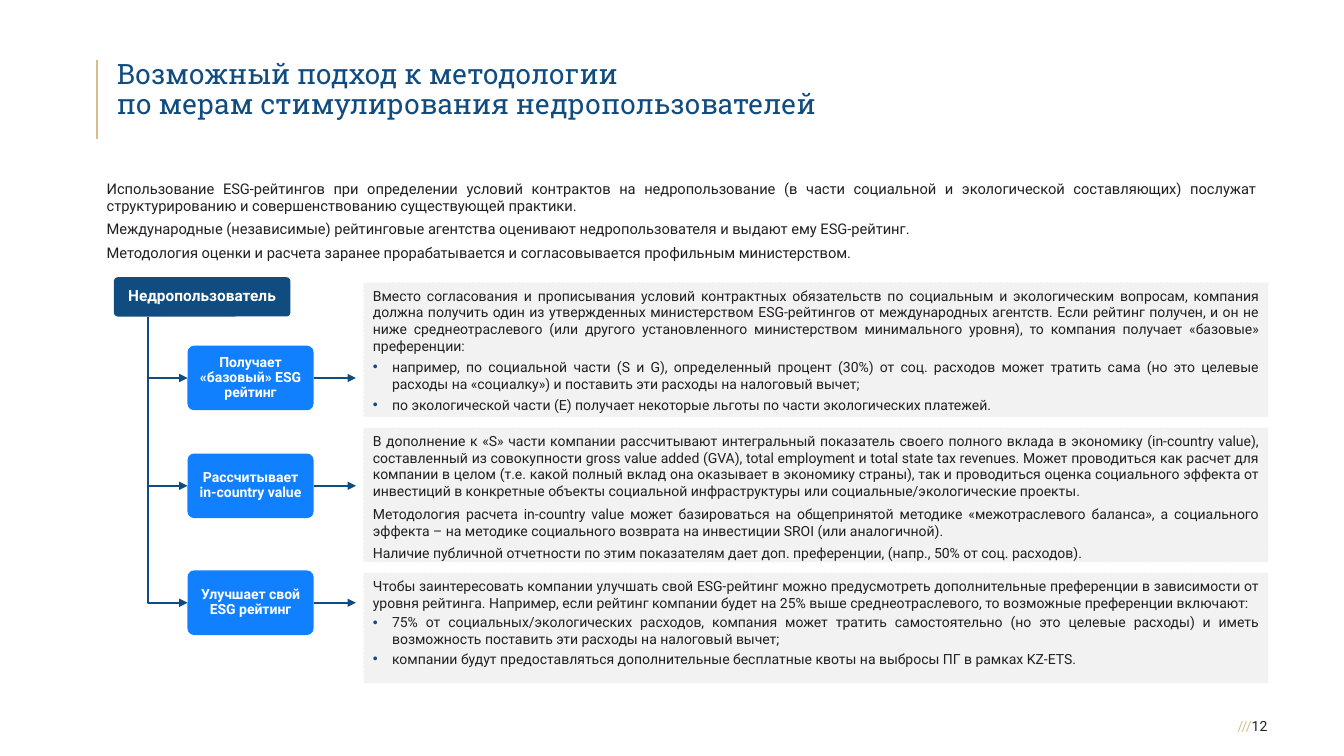
from pptx import Presentation
from pptx.dml.color import RGBColor
from pptx.enum import dml, shapes, text
from pptx.oxml.ns import qn
from pptx.util import Inches, Pt
from lxml import etree

NAVY = RGBColor(0x11, 0x4C, 0x81)
BLUE = RGBColor(0x10, 0x80, 0xFF)
GOLD = RGBColor(0xD9, 0xBE, 0x87)
GREY = RGBColor(0xF2, 0xF2, 0xF2)
INK = RGBColor(0x23, 0x1F, 0x20)
WHITE = RGBColor(0xFF, 0xFF, 0xFF)

CENTER, RIGHT, JUSTIFY = (text.PP_ALIGN.CENTER, text.PP_ALIGN.RIGHT,
                          text.PP_ALIGN.JUSTIFY)
TOP, MIDDLE = text.MSO_ANCHOR.TOP, text.MSO_ANCHOR.MIDDLE

TITLE = ["Возможный подход к методологии",
         "по мерам стимулирования недропользователей"]
INTRO = [
    "Использование ESG-рейтингов при определении условий контрактов на недропользование (в части социальной и экологической составляющих) послужат структурированию и совершенствованию существующей практики.",
    "Международные (независимые) рейтинговые агентства оценивают недропользователя и выдают ему ESG-рейтинг.",
    "Методология оценки и расчета заранее прорабатывается и согласовывается профильным министерством.",
]

# step label, step top, panel top, panel height, (before, after) spacing,
# plain paragraphs, bulleted paragraphs
STEPS = [
    ("Получает «базовый» ESG рейтинг", 3.43, 2.8, 1.34, (0, 3), [
        "Вместо согласования и прописывания условий контрактных обязательств по социальным и экологическим вопросам, компания должна получить один из утвержденных министерством ESG-рейтингов от международных агентств. Если рейтинг получен, и он не ниже среднеотраслевого (или другого установленного министерством минимального уровня), то компания получает «базовые» преференции:",
    ], [
        "например, по социальной части (S и G), определенный процент (30%) от соц. расходов может тратить сама (но это целевые расходы на «социалку») и поставить эти расходы на налоговый вычет;",
        "по экологической части (E) получает некоторые льготы по части экологических платежей.",
    ]),
    ("Рассчитывает in-country value", 4.5, 4.24, 1.34, (2, 2), [
        "В дополнение к «S» части компании рассчитывают интегральный показатель своего полного вклада в экономику (in-country value), составленный из совокупности gross value added (GVA), total employment и total state tax revenues. Может проводиться как расчет для компании в целом (т.е. какой полный вклад она оказывает в экономику страны), так и проводиться оценка социального эффекта от инвестиций в конкретные объекты социальной инфраструктуры или социальные/экологические проекты.",
        "Методология расчета in-country value может базироваться на общепринятой методике «межотраслевого баланса», а социального эффекта – на методике социального возврата на инвестиции SROI (или аналогичной).",
        "Наличие публичной отчетности по этим показателям дает доп. преференции, (напр., 50% от соц. расходов).",
    ], []),
    ("Улучшает свой ESG рейтинг", 5.66, 5.68, 1.1, (1, 1), [
        "Чтобы заинтересовать компании улучшать свой ESG-рейтинг можно предусмотреть дополнительные преференции в зависимости от уровня рейтинга. Например, если рейтинг компании будет на 25% выше среднеотраслевого, то возможные преференции включают:",
    ], [
        "75% от социальных/экологических расходов, компания может тратить самостоятельно (но это целевые расходы) и иметь возможность поставить эти расходы на налоговый вычет;",
        "компании будут предоставляться дополнительные бесплатные квоты на выбросы ПГ в рамках KZ-ETS.",
    ]),
]
STEP_X, STEP_W, STEP_H = 1.86, 1.25, 0.64
TRUNK_X, TRUNK_TOP = 1.47, 3.14


def add_run(p, words, size, color, font="Roboto", bold=False):
    r = p.add_run()
    r.text = words
    r.font.name, r.font.size, r.font.bold = font, Pt(size), bold
    r.font.color.rgb = color


def set_frame(tf, insets=(0.1, 0.05, 0.1, 0.05), anchor=TOP):
    tf.word_wrap = True
    tf.vertical_anchor = anchor
    (tf.margin_left, tf.margin_top,
     tf.margin_right, tf.margin_bottom) = map(Inches, insets)


def add_bullet(p):
    pPr = p._p.get_or_add_pPr()
    pPr.set("marL", str(Inches(0.19)))
    pPr.set("indent", str(Inches(-0.19)))
    color = etree.SubElement(pPr, qn("a:buClr"))
    etree.SubElement(color, qn("a:srgbClr"), val=str(NAVY))
    etree.SubElement(pPr, qn("a:buFont"), typeface="Arial")
    etree.SubElement(pPr, qn("a:buChar"), char="•")


def write_paragraphs(tf, plain, bullets, size, spacing):
    before, after = spacing
    for i, words in enumerate(plain + bullets):
        p = tf.add_paragraph() if i else tf.paragraphs[0]
        p.alignment = JUSTIFY
        p.space_before, p.space_after = Pt(before if i else 0), Pt(after)
        if i >= len(plain):
            add_bullet(p)
        add_run(p, words, size, INK)


def add_textbox(s, x, y, w, h):
    return s.shapes.add_textbox(*map(Inches, (x, y, w, h))).text_frame


def add_box(s, kind, x, y, w, h, fill):
    sp = s.shapes.add_shape(kind, *map(Inches, (x, y, w, h)))
    sp.shadow.inherit = False
    sp.fill.solid()
    sp.fill.fore_color.rgb = fill
    sp.line.fill.background()
    return sp


def add_label(s, x, y, w, h, fill, words, size):
    sp = add_box(s, shapes.MSO_SHAPE.ROUNDED_RECTANGLE, x, y, w, h, fill)
    sp.adjustments[0] = 0.1
    set_frame(sp.text_frame, (0.08, 0.05, 0.08, 0.05), MIDDLE)
    p = sp.text_frame.paragraphs[0]
    p.alignment, p.line_spacing = CENTER, 0.9
    add_run(p, words, size, WHITE, bold=True)
    return sp


def add_panel(s, y, h, plain, bullets, spacing):
    sp = add_box(s, shapes.MSO_SHAPE.RECTANGLE, 3.6, y, 8.98, h, GREY)
    sp.line.color.rgb = WHITE
    sp.line.width = Pt(0.25)
    sp.line.dash_style = dml.MSO_LINE.DASH
    set_frame(sp.text_frame)
    write_paragraphs(sp.text_frame, plain, bullets, 10, spacing)


def add_line(s, kind, x1, y1, x2, y2, color=NAVY, width=1.25, arrow=True):
    c = s.shapes.add_connector(kind, *map(Inches, (x1, y1, x2, y2)))
    c.line.color.rgb = color
    c.line.width = Pt(width)
    if arrow:
        etree.SubElement(c.line._get_or_add_ln(), qn("a:tailEnd"), type="triangle")
    etree.SubElement(c.element.spPr, qn("a:effectLst"))
    return c


def add_branch(s, y1, y2):
    """Arrow going down the trunk from y1 to y2, then right to a step."""
    cx, cy = (TRUNK_X + STEP_X) / 2, (y1 + y2) / 2
    dx, dy = (STEP_X - TRUNK_X) / 2, (y2 - y1) / 2
    # The one-bend preset starts horizontally, so it is turned a quarter.
    c = add_line(s, shapes.MSO_CONNECTOR.ELBOW,
                 cx - dy, cy - dx, cx + dy, cy + dx)
    spPr = c.element.spPr
    spPr.find(qn("a:prstGeom")).set("prst", "bentConnector2")
    xfrm = spPr.find(qn("a:xfrm"))
    xfrm.set("rot", str(270 * 60000))
    xfrm.set("flipH", "1")


def add_title(s):
    add_line(s, shapes.MSO_CONNECTOR.STRAIGHT, 0.96, 0.6, 0.96, 1.38,
             GOLD, 1.5, arrow=False)
    tf = add_textbox(s, 0.96, 0.6, 9.25, 0.78)
    set_frame(tf, (0.2, 0, 0, 0.16))
    p = tf.paragraphs[0]
    p.line_spacing = 0.9
    for i, line in enumerate(TITLE):
        if i:
            p.add_line_break()
        add_run(p, line, 20, NAVY, "Roboto Slab")


def add_page_number(s):
    tf = add_textbox(s, 12.18, 7, 0.39, 0.4)
    set_frame(tf, (0, 0, 0, 0), MIDDLE)
    p = tf.paragraphs[0]
    p.alignment = RIGHT
    add_run(p, "///", 10, GOLD)
    add_run(p, "12", 10, INK)


def main():
    prs = Presentation()
    prs.slide_width, prs.slide_height = Inches(13.33), Inches(7.5)
    s = prs.slides.add_slide(prs.slide_layouts[6])
    add_title(s)
    tf = add_textbox(s, 0.96, 1.73, 11.61, 0.92)
    set_frame(tf)
    write_paragraphs(tf, INTRO, [], 10.5, (2, 2))
    add_label(s, 1.13, 2.75, 1.75, 0.39, NAVY, "Недропользователь", 11)
    branch_top = TRUNK_TOP
    for label, step_y, panel_y, panel_h, spacing, plain, bullets in STEPS:
        middle = step_y + STEP_H / 2
        add_panel(s, panel_y, panel_h, plain, bullets, spacing)
        step = add_label(s, STEP_X, step_y, STEP_W, STEP_H, BLUE, label, 10)
        arrow = add_line(s, shapes.MSO_CONNECTOR.STRAIGHT,
                         STEP_X + STEP_W, middle, 3.53, middle)
        arrow.begin_connect(step, 3)
        add_branch(s, branch_top, middle)
        branch_top = middle
    add_page_number(s)
    prs.save("out.pptx")


if __name__ == "__main__":
    main()
